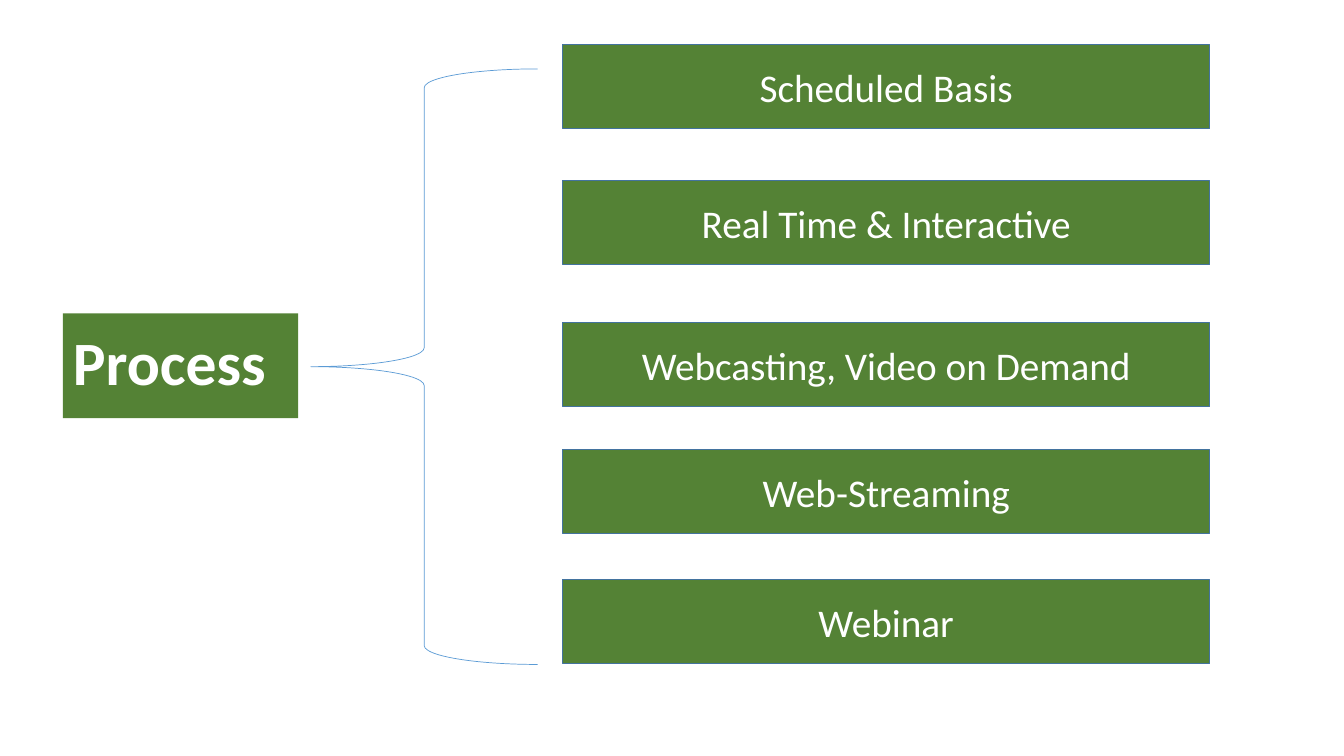
import pptx
import pptx.dml.color
import pptx.enum.shapes
import pptx.enum.text
import pptx.util

COLORS = {"green": "548235", "border": "43739E", "brace": "5B9BD5", "text": "FFFFFF"}
STEPS = [
    ("Scheduled Basis", 5.3),
    ("Real Time & Interactive", 21.5),
    ("Webcasting, Video on Demand", 38.4),
    ("Web-Streaming", 53.5),
    ("Webinar", 69),
]


class ProcessSlide:
    """Draws on one slide with a grid of 160 columns and 90 rows."""

    font = "Calibri"
    columns, rows = 160, 90

    def __init__(self, deck):
        self.slide = deck.slides.add_slide(deck.slide_layouts[6])
        self.column = deck.slide_width / self.columns
        self.row = deck.slide_height / self.rows

    def color(self, name):
        return pptx.dml.color.RGBColor.from_string(COLORS[name])

    def shape(self, kind, left, top, width, height, fill=None, line=None, weight=1):
        shape = self.slide.shapes.add_shape(
            kind,
            round(left * self.column),
            round(top * self.row),
            round(width * self.column),
            round(height * self.row),
        )
        shape.shadow.inherit = False
        if fill:
            shape.fill.solid()
            shape.fill.fore_color.rgb = self.color(fill)
        else:
            shape.fill.background()
        if line:
            shape.line.color.rgb = self.color(line)
            shape.line.width = pptx.util.Pt(weight)
        else:
            shape.line.fill.background()
        return shape

    def box(self, text, left, top, width, height, size, align, bold=False, line=None):
        box = self.shape(pptx.enum.shapes.MSO_SHAPE.RECTANGLE,
                         left, top, width, height, "green", line)
        frame = box.text_frame
        frame.word_wrap = True
        frame.vertical_anchor = pptx.enum.text.MSO_ANCHOR.MIDDLE
        paragraph = frame.paragraphs[0]
        paragraph.text = text
        paragraph.alignment = align
        paragraph.font.name = self.font
        paragraph.font.size = pptx.util.Pt(size)
        paragraph.font.bold = bold
        paragraph.font.color.rgb = self.color("text")
        return paragraph

    def brace(self, left, top, width, height):
        self.shape(pptx.enum.shapes.MSO_SHAPE.LEFT_BRACE,
                   left, top, width, height, line="brace", weight=0.5)


def main():
    deck = pptx.Presentation()
    deck.slide_width = pptx.util.Inches(13.33)
    deck.slide_height = pptx.util.Inches(7.5)
    page = ProcessSlide(deck)
    align = pptx.enum.text.PP_ALIGN

    heading = page.box("Process", 7.5, 37.3, 28, 12.5, 44, align.LEFT, bold=True)
    heading.line_spacing = 0.9
    for step, top in STEPS:
        page.box(step, 67, top, 77, 10, 28, align.CENTER, line="border")
    page.brace(37, 8.2, 27, 70.9)

    deck.save("out.pptx")


if __name__ == "__main__":
    main()
